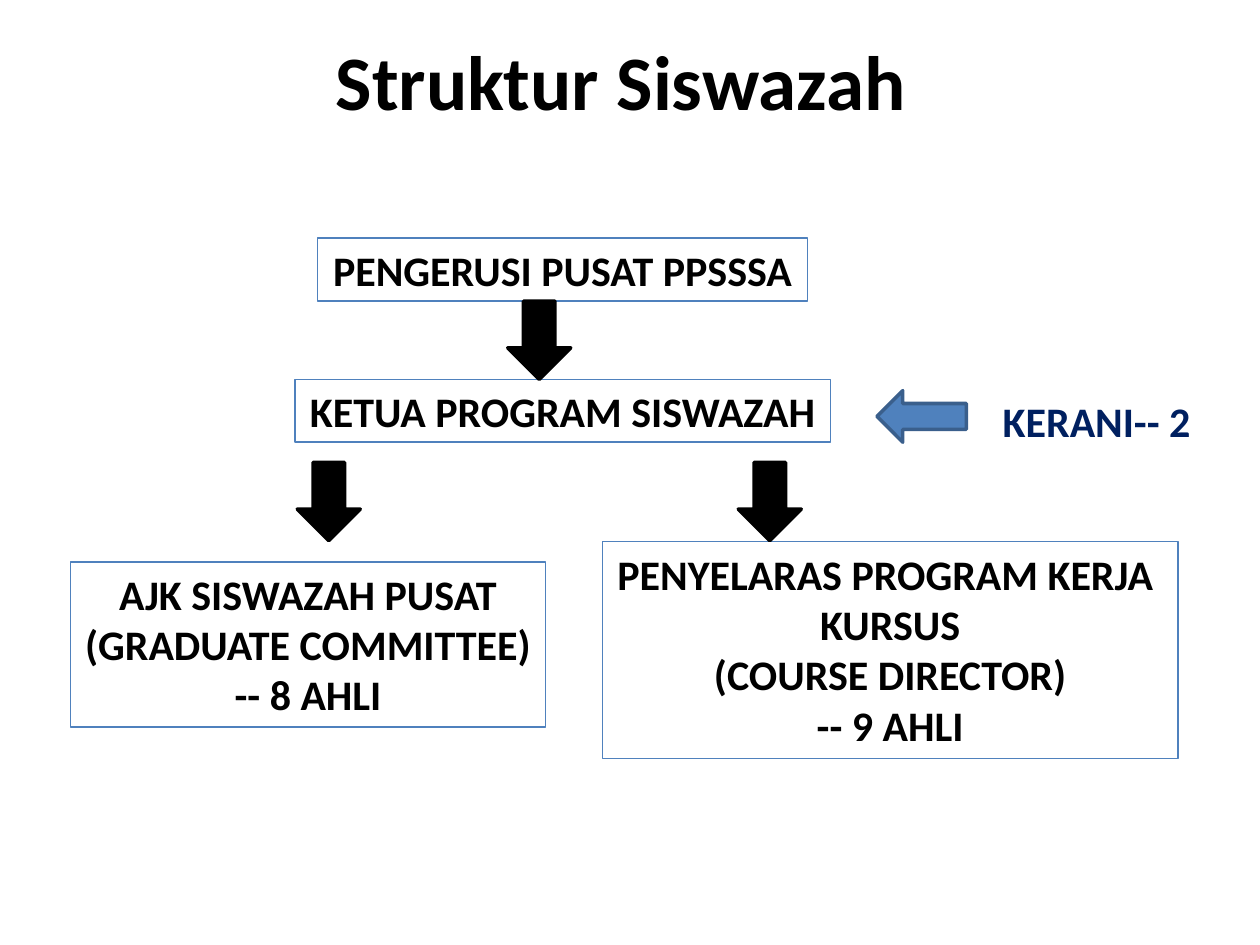
from dataclasses import dataclass

from pptx import Presentation
from pptx import util as u
from pptx.dml.color import RGBColor
from pptx.enum import shapes, text


@dataclass(frozen=True)
class Theme:
    """Colours, font and type sizes of the slide."""
    ink: str = "000000"
    navy: str = "002060"
    blue: str = "4F81BD"
    edge: str = "3A5F8C"
    font: str = "Calibri"
    head: int = 44
    body: int = 24
    thin: float = 0.75
    thick: float = 2


THEME = Theme()
CELL = u.Inches(0.1)
COLS, ROWS = 100, 75
BOXES = [
    ((25.2, 18.9, 38.9, 5), ["PENGERUSI PUSAT PPSSSA"]),
    ((23.4, 30.1, 42.5, 5), ["KETUA PROGRAM SISWAZAH"]),
    ((5.6, 44.6, 37.7, 13.1),
     ["AJK SISWAZAH PUSAT", "(GRADUATE COMMITTEE)", "-- 8 AHLI"]),
    ((47.8, 43, 45.7, 17.2),
     ["PENYELARAS PROGRAM KERJA ", "KURSUS", "(COURSE DIRECTOR)", "-- 9 AHLI"]),
]
DOWN = [(40.3, 23.9), (23.6, 36.7), (58.6, 36.7)]


def rgb(code):
    """Turn a hex code into a colour."""
    return RGBColor.from_string(code)


def grid(*cells):
    """Turn grid cells into slide lengths."""
    return [round(n * CELL) for n in cells]


def style(item, **values):
    """Set each given attribute on an item."""
    for name, value in values.items():
        setattr(item, name, value)


def write(frame, lines, size, color, align):
    """Fill a text frame with bold lines."""
    frame.text = "\n".join(lines)
    for para in frame.paragraphs:
        para.alignment = align
        style(para.runs[0].font, name=THEME.font, size=u.Pt(size), bold=True)
        para.runs[0].font.color.rgb = rgb(color)


def title(slide, words, area):
    """Place and format the title."""
    head = slide.shapes.title
    style(head, **dict(zip(("left", "top", "width", "height"), grid(*area))))
    write(head.text_frame, [words], THEME.head, THEME.ink, text.PP_ALIGN.CENTER)
    head.text_frame.vertical_anchor = text.MSO_ANCHOR.MIDDLE


def label(slide, lines, area, color=THEME.ink, align=text.PP_ALIGN.CENTER):
    """Add a text box that fits its lines."""
    box = slide.shapes.add_textbox(*grid(*area))
    write(box.text_frame, lines, THEME.body, color, align)
    style(box.text_frame, word_wrap=False,
          auto_size=text.MSO_AUTO_SIZE.SHAPE_TO_FIT_TEXT)
    return box


def frame(slide, lines, area):
    """Add a label with a thin blue outline."""
    line = label(slide, lines, area).line
    line.color.rgb = rgb(THEME.blue)
    line.width = u.Pt(THEME.thin)


def arrow(slide, kind, area, fill, edge):
    """Add a filled block arrow."""
    item = slide.shapes.add_shape(kind, *grid(*area))
    item.shadow.inherit = False
    item.fill.solid()
    item.fill.fore_color.rgb = rgb(fill)
    item.line.color.rgb = rgb(edge)
    item.line.width = u.Pt(THEME.thick)


def main():
    """Build the structure chart and save it."""
    deck = Presentation()
    style(deck, slide_width=COLS * CELL, slide_height=ROWS * CELL)
    slide = deck.slides.add_slide(deck.slide_layouts.get_by_name("Title Only"))
    title(slide, "Struktur Siswazah", (4.3, 0.1, 90, 12.5))
    for area, lines in BOXES:
        frame(slide, lines, area)
    kind = shapes.MSO_SHAPE
    for spot in DOWN:
        arrow(slide, kind.DOWN_ARROW, (*spot, 5, 6.2), THEME.ink, THEME.ink)
    label(slide, ["KERANI-- 2"], (78.6, 30.9, 17.1, 5), THEME.navy,
          text.PP_ALIGN.LEFT)
    arrow(slide, kind.LEFT_ARROW, (69.6, 31, 7.1, 4.1), THEME.blue, THEME.edge)
    deck.save("out.pptx")


if __name__ == "__main__":
    main()
